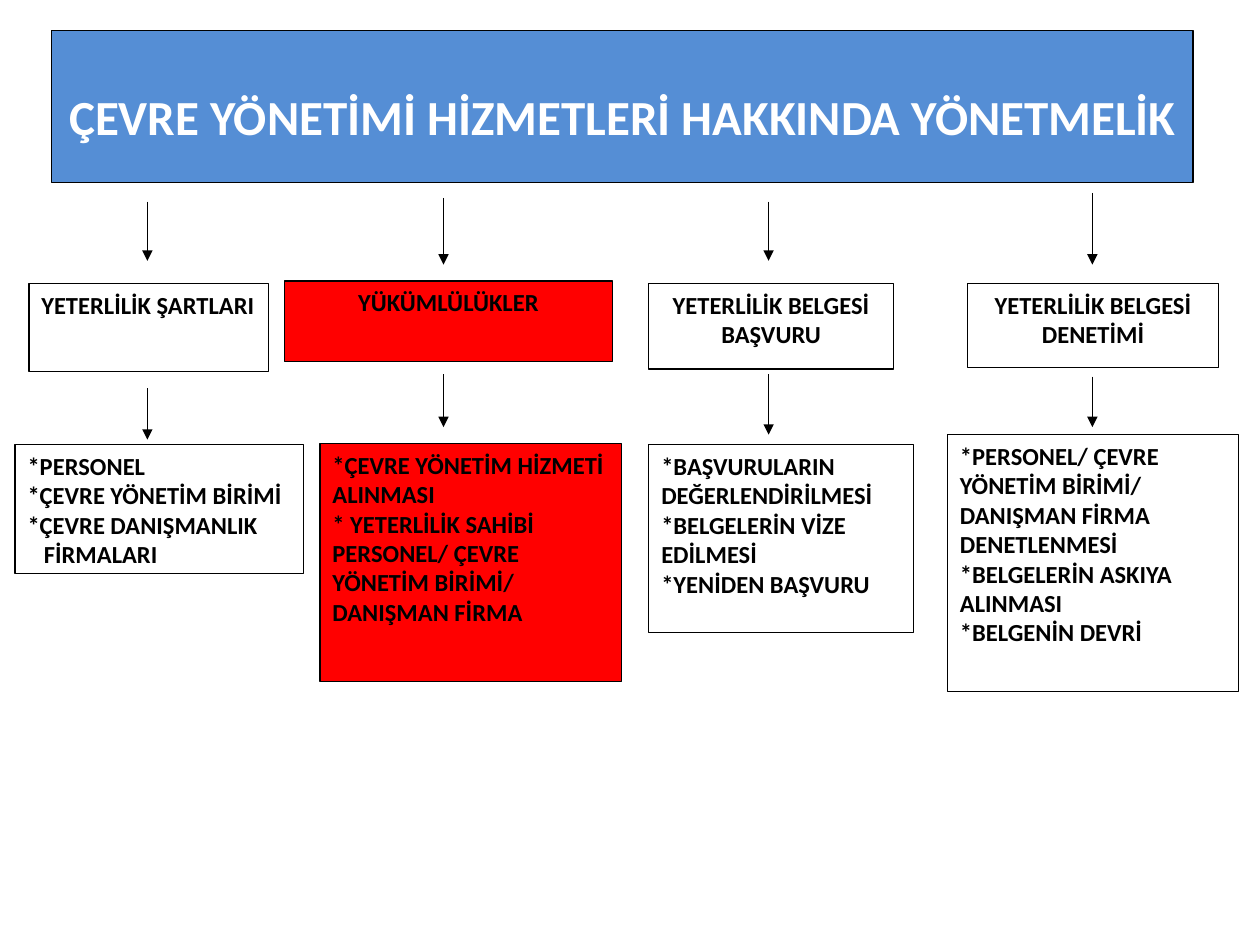
from lxml.etree import SubElement
from pptx import Presentation
from pptx.dml.color import RGBColor as Rgb
from pptx.enum.shapes import MSO_CONNECTOR as Connector, MSO_SHAPE as Shape
from pptx.enum.text import MSO_ANCHOR as Anchor, PP_ALIGN as Align
from pptx.oxml.ns import qn
from pptx.util import Inches, Pt

COLORS = {"banner": "558ED5", "plain": "FFFFFF", "accent": "FF0000", "ink": "000000"}
COLUMNS, ROWS = 100, 75
SLIDE_W, SLIDE_H = Inches(10), Inches(7.5)
FRAME = {"word_wrap": True, "vertical_anchor": Anchor.TOP}
FONT = {"name": "Calibri", "bold": True}
HANGING = "FİRMALARI"

BANNER = (4.1, 2.4, 90.6, 12.1)
BRANCHES = [
    {
        "box": (1.2, 15, 22.9, 30.5), "fill": "plain", "axis": 10.5,
        "arrows": [(1, 5.7), (15.8, 19.9)],
        "heading": (1.1, 7.5, 19, 7), "align": Align.LEFT, "detail_top": 20.3, "detail_left": 0,
        "title": "YETERLİLİK ŞARTLARI",
        "items": ["*PERSONEL", "*ÇEVRE YÖNETİM BİRİMİ", "*ÇEVRE DANIŞMANLIK", HANGING],
    },
    {
        "box": (22.6, 15, 26.7, 39.1), "fill": "accent", "axis": 12.6,
        "arrows": [(0.7, 6), (14.7, 18.9)],
        "heading": (0, 7.3, 26, 6.4), "align": Align.CENTER, "detail_top": 20.2, "detail_left": 2.8,
        "title": "YÜKÜMLÜLÜKLER",
        "items": ["*ÇEVRE YÖNETİM HİZMETİ ALINMASI",
                  "* YETERLİLİK SAHİBİ PERSONEL/ ÇEVRE YÖNETİM BİRİMİ/ DANIŞMAN FİRMA"],
    },
    {
        "box": (51.5, 15, 21, 35.2), "fill": "plain", "axis": 9.5,
        "arrows": [(1, 5.7), (14.7, 19.5)],
        "heading": (0, 7.5, 19.4, 6.8), "align": Align.CENTER, "detail_top": 20.3, "detail_left": 0,
        "title": "YETERLİLİK BELGESİ BAŞVURU",
        "items": ["*BAŞVURULARIN DEĞERLENDİRİLMESİ", "*BELGELERİN VİZE EDİLMESİ",
                  "*YENİDEN BAŞVURU"],
    },
    {
        "box": (75.2, 15, 23.1, 39.9), "fill": "plain", "axis": 11.5,
        "arrows": [(0.3, 6), (14.9, 18.9)],
        "heading": (1.6, 7.5, 19.9, 6.7), "align": Align.CENTER, "detail_top": 19.5, "detail_left": 0,
        "title": "YETERLİLİK BELGESİ DENETİMİ",
        "items": ["*PERSONEL/ ÇEVRE YÖNETİM BİRİMİ/ DANIŞMAN FİRMA DENETLENMESİ",
                  "*BELGELERİN ASKIYA ALINMASI", "*BELGENİN DEVRİ"],
    },
]


def col(count):
    return int(SLIDE_W * count / COLUMNS)


def row(count):
    return int(SLIDE_H * count / ROWS)


def color(name):
    return Rgb.from_string(COLORS[name])


def apply(target, values):
    for key, value in values.items():
        setattr(target, key, value)


def outline(part):
    part.line.color.rgb = color("ink")
    part.line.width = Pt(0.75)


def add_panel(slide, box, fill, lines, size, align, ink="ink", margins=None):
    left, top, width, height = box
    panel = slide.shapes.add_shape(Shape.RECTANGLE, col(left), row(top), col(width), row(height))
    panel.shadow.inherit = False
    panel.fill.solid()
    panel.fill.fore_color.rgb = color(fill)
    outline(panel)
    frame = panel.text_frame
    apply(frame, FRAME | (margins or {}))
    for index, line in enumerate(lines):
        paragraph = frame.add_paragraph() if index else frame.paragraphs[0]
        paragraph.alignment = align
        if line == HANGING:
            paragraph._p.get_or_add_pPr().set("marL", str(Inches(0.13)))
        run = paragraph.add_run()
        run.text = line
        apply(run.font, FONT | {"size": Pt(size)})
        run.font.color.rgb = color(ink)


def add_arrow(slide, x, start, end):
    arrow = slide.shapes.add_connector(Connector.STRAIGHT, col(x), row(start), col(x), row(end))
    outline(arrow)
    arrow.line._get_or_add_ln().append(
        arrow._element.makeelement(qn("a:tailEnd"), {"type": "triangle"}))
    SubElement(arrow._element.spPr, qn("a:effectLst"))


def add_banner(slide, box):
    add_panel(slide, box, "banner", ["ÇEVRE YÖNETİMİ HİZMETLERİ HAKKINDA YÖNETMELİK"], 28,
              Align.CENTER, "plain", {"margin_top": row(4.5)})


def add_branch(slide, branch):
    left, top, width, height = branch["box"]
    dx, dy, heading_width, heading_height = branch["heading"]
    tight = {"margin_right": col(0.5)}
    add_panel(slide, (left + dx, top + dy, heading_width, heading_height), branch["fill"],
              [branch["title"]], 14, branch["align"],
              margins=tight if branch["align"] == Align.LEFT else None)
    inset, drop = branch["detail_left"], branch["detail_top"]
    add_panel(slide, (left + inset, top + drop, width - inset, height - drop), branch["fill"],
              branch["items"], 14, Align.LEFT)
    for start, end in branch["arrows"]:
        add_arrow(slide, left + branch["axis"], top + start, top + end)


def main():
    deck = Presentation()
    apply(deck, {"slide_width": SLIDE_W, "slide_height": SLIDE_H})
    slide = deck.slides.add_slide(deck.slide_layouts[6])
    add_banner(slide, BANNER)
    for branch in BRANCHES:
        add_branch(slide, branch)
    deck.save("out.pptx")


if __name__ == "__main__":
    main()
